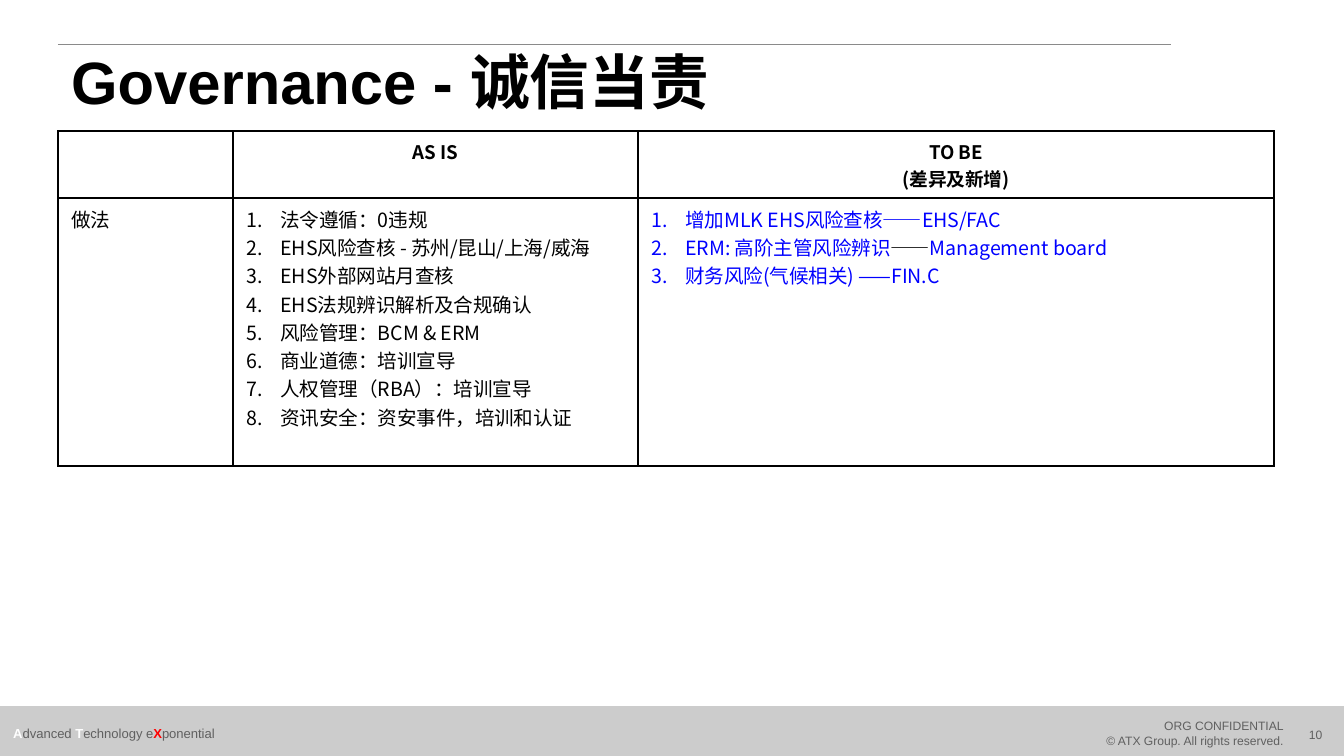
from dataclasses import dataclass

from lxml import etree
from pptx import Presentation
from pptx.dml.color import RGBColor
from pptx.enum.shapes import MSO_CONNECTOR, MSO_SHAPE
from pptx.enum.text import MSO_ANCHOR, PP_ALIGN
from pptx.oxml.ns import qn
from pptx.util import Emu, Pt

LEFT, CENTER, RIGHT = PP_ALIGN.LEFT, PP_ALIGN.CENTER, PP_ALIGN.RIGHT
MIDDLE = MSO_ANCHOR.MIDDLE
RECTANGLE = MSO_SHAPE.RECTANGLE
STRAIGHT = MSO_CONNECTOR.STRAIGHT

EMU_PER_PX = 914400 / 134.4


def px(length):
    return Emu(round(length * EMU_PER_PX))


@dataclass(frozen=True)
class Theme:
    black: str = "000000"
    white: str = "FFFFFF"
    blue: str = "0000FF"
    red: str = "FF0000"
    band: str = "CCCCCC"
    rule: str = "8A8A8A"
    muted: str = "606060"
    latin: str = "Arial"
    chinese: str = "Noto Sans CJK SC"
    title: float = 32
    body: float = 10.5
    header: float = 10
    footer: float = 7
    small: float = 6.5


THEME = Theme()


def write(paragraph, text, *, size, color=THEME.black, bold=False, font=THEME.latin,
          align=LEFT, spacing=None):
    """Append one formatted run to a paragraph."""
    paragraph.alignment = align
    if spacing:
        paragraph.line_spacing = spacing
    run = paragraph.add_run()
    run.text = text
    run.font.size = Pt(size)
    run.font.bold = bold
    run.font.color.rgb = RGBColor.from_string(color)
    run.font.name = font
    etree.SubElement(run.font._element, qn("a:ea"), typeface=THEME.chinese)


class SlideBuilder:
    def __init__(self, slide, theme):
        self.slide = slide
        self.theme = theme

    def band(self, left, top, width, height):
        shape = self.slide.shapes.add_shape(RECTANGLE, px(left), px(top), px(width), px(height))
        shape.shadow.inherit = False
        color = RGBColor.from_string(self.theme.band)
        shape.fill.solid()
        shape.fill.fore_color.rgb = color
        shape.line.color.rgb = color
        shape.line.width = Pt(1)

    def rule(self, left, right, y):
        line = self.slide.shapes.add_connector(STRAIGHT, px(left), px(y), px(right), px(y))
        line.line.color.rgb = RGBColor.from_string(self.theme.rule)
        line.line.width = Pt(0.5)
        etree.SubElement(line._element.spPr, qn("a:effectLst"))

    def text(self, left, top, width, height, lines, **style):
        box = self.slide.shapes.add_textbox(px(left), px(top), px(width), px(height))
        box.text_frame.word_wrap = True
        box.text_frame.vertical_anchor = MIDDLE
        self.fill_frame(box.text_frame, lines, **style)

    def fill_frame(self, frame, lines, numbered=False, **style):
        """Each line is a list of (text, format overrides)."""
        for index, runs in enumerate(lines):
            paragraph = frame.add_paragraph() if index else frame.paragraphs[0]
            if numbered:
                self.number(paragraph)
            for text, changes in runs:
                write(paragraph, text, **{**style, **changes})

    def number(self, paragraph):
        properties = paragraph._p.get_or_add_pPr()
        indent = px(34)
        properties.set("marL", str(indent))
        properties.set("indent", str(-indent))
        etree.SubElement(properties, qn("a:buFont"), typeface="+mj-lt")
        etree.SubElement(properties, qn("a:buAutoNum"), type="arabicPeriod")

    def table(self, left, top, widths, heights):
        frame = self.slide.shapes.add_table(len(heights), len(widths), px(left), px(top),
                                            px(sum(widths)), px(sum(heights)))
        table = frame.table
        table.first_row = table.horz_banding = False
        for column, width in zip(table.columns, widths):
            column.width = px(width)
        for row, height in zip(table.rows, heights):
            row.height = px(height)
        for cell in table.iter_cells():
            self.border(cell)
            cell.fill.background()
        return table

    def border(self, cell):
        properties = cell._tc.get_or_add_tcPr()
        for side in ("a:lnL", "a:lnR", "a:lnT", "a:lnB"):
            line = etree.SubElement(properties, qn(side), w=str(Pt(1)))
            fill = etree.SubElement(line, qn("a:solidFill"))
            etree.SubElement(fill, qn("a:srgbClr"), val=self.theme.black)


def plain(*texts):
    return [[(text, {})] for text in texts]


def main():
    presentation = Presentation()
    presentation.slide_width, presentation.slide_height = px(1344), px(756)
    slide = presentation.slides.add_slide(presentation.slide_layouts[6])
    builder = SlideBuilder(slide, THEME)

    # Footer
    builder.band(0, 707, 1344, 48)
    builder.text(1278, 715, 75, 39, plain("10"),
                 size=THEME.small, color=THEME.muted, align=CENTER)
    builder.text(1071, 712, 226, 42,
                 plain("ORG CONFIDENTIAL", "© ATX Group. All rights reserved."),
                 size=THEME.small, color=THEME.muted, align=RIGHT)
    white = {"color": THEME.white, "bold": True}
    red = {"color": THEME.red, "bold": True}
    slogan = [("A", white), ("dvanced ", {}), ("T", white),
              ("echnology e", {}), ("X", red), ("ponential", {})]
    builder.text(0, 712, 257, 42, [slogan], size=THEME.footer, color=THEME.muted)

    # Title
    builder.rule(58, 1171, 45)
    builder.text(58, 48, 1159, 74, plain("Governance - 诚信当责"),
                 size=THEME.title, bold=True, spacing=0.9)

    # Comparison table
    table = builder.table(58, 131, widths=(175, 405, 636), heights=(67, 268))
    header = {"size": THEME.header, "bold": True, "font": THEME.chinese, "align": CENTER}
    body = {"size": THEME.body, "font": THEME.chinese}
    as_is = plain(
        "法令遵循：0违规",
        "EHS风险查核 - 苏州/昆山/上海/威海",
        "EHS外部网站月查核",
        "EHS法规辨识解析及合规确认",
        "风险管理：BCM & ERM",
        "商业道德：培训宣导",
        "人权管理（RBA）：培训宣导",
        "资讯安全：资安事件，培训和认证",
    )
    to_be = [
        [("增加MLK EHS风险查核——EHS/FAC", {})],
        [("ERM: 高阶主管风险辨识", {}), ("——", {"color": THEME.black}),
         ("Management board", {})],
        [("财务风险(气候相关) ——FIN.C", {})],
    ]
    contents = (
        (0, 1, plain("AS IS"), header),
        (0, 2, plain("TO BE", "(差异及新增)"), header),
        (1, 0, plain("做法"), body),
        (1, 1, as_is, {**body, "numbered": True}),
        (1, 2, to_be, {**body, "numbered": True, "color": THEME.blue}),
    )
    for row, column, lines, style in contents:
        builder.fill_frame(table.cell(row, column).text_frame, lines, **style)

    presentation.save("out.pptx")


if __name__ == "__main__":
    main()
